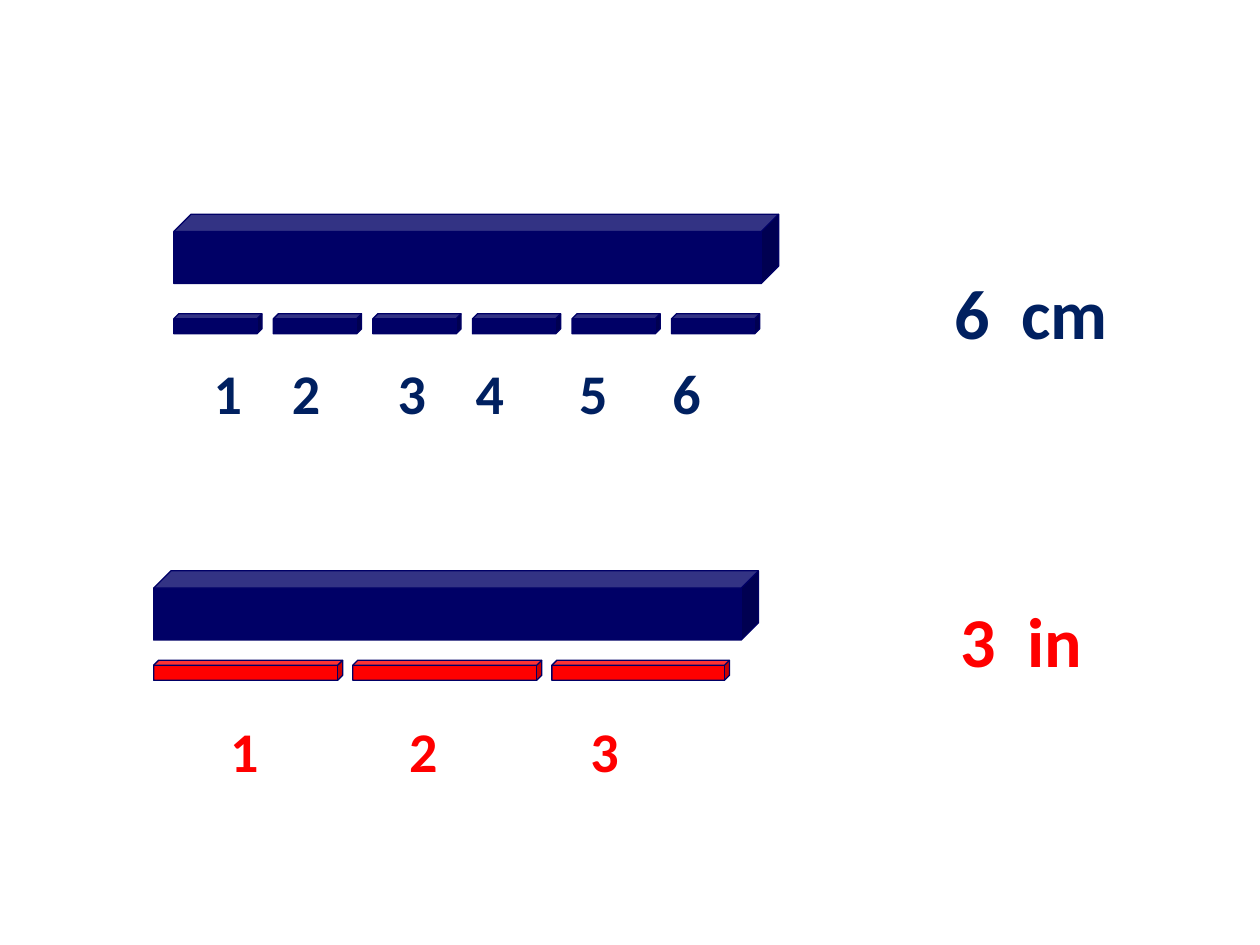
import pptx
import pptx.dml.color
import pptx.enum.shapes
import pptx.enum.text
import pptx.oxml.ns
import pptx.util
from lxml import etree
from pptx.util import Inches

NAVY, RED, INK = "000066", "FF0000", "002060"


def rgb(hex_code):
    return pptx.dml.color.RGBColor.from_string(hex_code)


def add_bar(shapes, left, top, width, height, color):
    bar = shapes.add_shape(pptx.enum.shapes.MSO_SHAPE.CUBE, Inches(left),
                           Inches(top), Inches(width), Inches(height))
    bar.shadow.inherit = False
    bar.fill.solid()
    bar.fill.fore_color.rgb = rgb(color)
    bar.line.color.rgb = rgb(NAVY)
    bar.line.width = pptx.util.Pt(0.75)


presentation = pptx.Presentation()
presentation.slide_width = Inches(10)
presentation.slide_height = Inches(7.5)
slide = presentation.slides.add_slide(presentation.slide_layouts[6])

# Each ruler: left, bar top, unit top, unit pitch, unit widths, unit color
rulers = [
    (1.38, 1.7, 2.49, 0.79, [0.7] * 6, NAVY),
    (1.22, 4.53, 5.24, 1.58, [1.5, 1.5, 1.41], RED),
]
for left, bar_top, unit_top, pitch, widths, color in rulers:
    add_bar(slide.shapes, left, bar_top, 4.8, 0.55, color=NAVY)
    units = slide.shapes.add_group_shape()
    for index, width in enumerate(widths):
        add_bar(units.shapes, left + index * pitch, unit_top, width, 0.16, color)

# Counts under the units, each digit centred on its own tab stop
counts = [
    (1.38, 2.8, 4.65, [0.33, 0.95, 1.79, 2.41, 3.23, 3.97], INK),
    (1.22, 5.64, 6.22, [0.62, 2.04, 3.48], RED),
]
for left, top, width, stops, color in counts:
    count_box = slide.shapes.add_textbox(Inches(left), Inches(top),
                                         Inches(width), Inches(0.63))
    count_box.text_frame.word_wrap = True
    count = count_box.text_frame.paragraphs[0]
    count.text = "".join(f"\t{number}" for number in range(1, len(stops) + 1))
    tab_list = etree.SubElement(count._p.get_or_add_pPr(),
                                pptx.oxml.ns.qn("a:tabLst"))
    for stop in stops:
        etree.SubElement(tab_list, pptx.oxml.ns.qn("a:tab"),
                         pos=str(Inches(stop)), algn="ctr")
    for run in count.runs:
        run.font.name = "Calibri"
        run.font.size = pptx.util.Pt(32)
        run.font.bold = True
        run.font.color.rgb = rgb(color)

# Measured lengths, with a widened space between number and unit
measures = [(7.36, 2.09, "6", "cm", INK), (7.28, 4.69, "3", "in", RED)]
for left, top, number, unit, color in measures:
    measure_box = slide.shapes.add_textbox(Inches(left), Inches(top),
                                           Inches(1.65), Inches(1.57))
    measure_box.text_frame.word_wrap = True
    measure = measure_box.text_frame.paragraphs[0]
    measure.alignment = pptx.enum.text.PP_ALIGN.CENTER
    for part in (number, " ", unit):
        run = measure.add_run()
        run.text = part
        run.font.name = "Calibri"
        run.font.size = pptx.util.Pt(40)
        run.font.bold = True
        run.font.color.rgb = rgb(color)
        if part == " ":
            run.font._element.set("spc", "900")

presentation.save("out.pptx")
